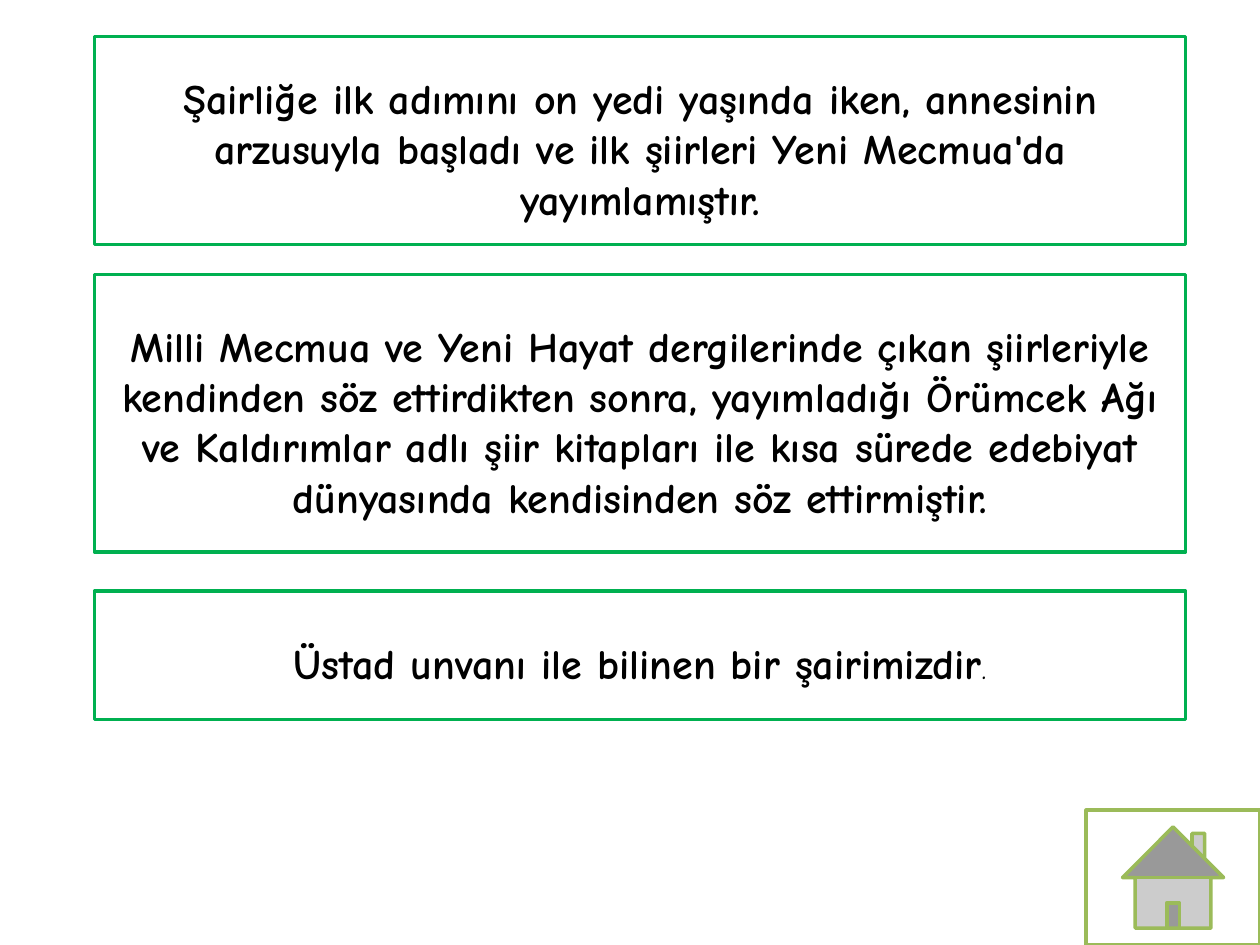
from pptx import Presentation
from pptx.dml.color import RGBColor
from pptx.enum.shapes import MSO_SHAPE
from pptx.enum.text import MSO_ANCHOR, PP_ALIGN
from pptx.util import Inches, Pt

RECT = MSO_SHAPE.RECTANGLE
HOME = MSO_SHAPE.ACTION_BUTTON_HOME
MIDDLE = MSO_ANCHOR.MIDDLE
CENTER = PP_ALIGN.CENTER

THEME = {
    "paper": RGBColor(0xFF, 0xFF, 0xFF),
    "ink": RGBColor(0, 0, 0),
    "frame": RGBColor(0x00, 0xB0, 0x50),
    "home": RGBColor(0x9B, 0xBB, 0x59),
    "line": Pt(2),
    "font": "Comic Neue",
    "text": Pt(24),
    "small": Pt(18),
}

WIDE, HIGH = 10, 7.5
LEFT, SPAN = 0.75, 8.66

# Top, height and runs (text, size name, bold) of each card
CARDS = [
    (0.29, 1.65, [("Şairliğe ilk adımını on yedi yaşında iken, annesinin "
                   "arzusuyla başladı ve ilk şiirleri Yeni Mecmua'da "
                   "yayımlamıştır.", "text", True)]),
    (2.18, 2.2, [("Milli Mecmua ve Yeni Hayat dergilerinde çıkan şiirleriyle "
                  "kendinden söz ettirdikten sonra, yayımladığı Örümcek Ağı "
                  "ve Kaldırımlar adlı şiir kitapları ile kısa sürede edebiyat "
                  "dünyasında kendisinden söz ettirmiştir.", "text", True)]),
    (4.69, 1.02, [("Üstad unvanı ile bilinen bir şairimizdir", "text", True),
                  (".", "small", False)]),
]


def apply(item, values):
    for name, value in values.items():
        setattr(item, name, value)


def add_box(slide, kind, place, hue):
    box = slide.shapes.add_shape(kind, *map(Inches, place))
    box.shadow.inherit = False
    box.fill.solid()
    box.fill.fore_color.rgb = THEME["paper"]
    box.line.color.rgb = THEME[hue]
    box.line.width = THEME["line"]
    return box


def add_card(slide, top, height, runs):
    box = add_box(slide, RECT, (LEFT, top, SPAN, height), "frame")
    frame = box.text_frame
    # Uneven margins set the text slightly below the middle
    apply(frame, {"word_wrap": True, "vertical_anchor": MIDDLE,
                  "margin_top": Inches(0.15), "margin_bottom": Inches(0.03)})
    para = frame.paragraphs[0]
    para.alignment = CENTER
    for text, size, bold in runs:
        run = para.add_run()
        run.text = text
        apply(run.font, {"name": THEME["font"], "size": THEME[size],
                         "bold": bold})
        run.font.color.rgb = THEME["ink"]


def add_home(slide, width, height):
    # Button in the bottom right corner
    add_box(slide, HOME, (WIDE - width, HIGH - height, width, height), "home")


def main():
    deck = Presentation()
    apply(deck, {"slide_width": Inches(WIDE), "slide_height": Inches(HIGH)})
    slide = deck.slides.add_slide(deck.slide_layouts[6])
    for card in CARDS:
        add_card(slide, *card)
    add_home(slide, 1.38, 1.07)
    deck.save("out.pptx")


if __name__ == "__main__":
    main()
